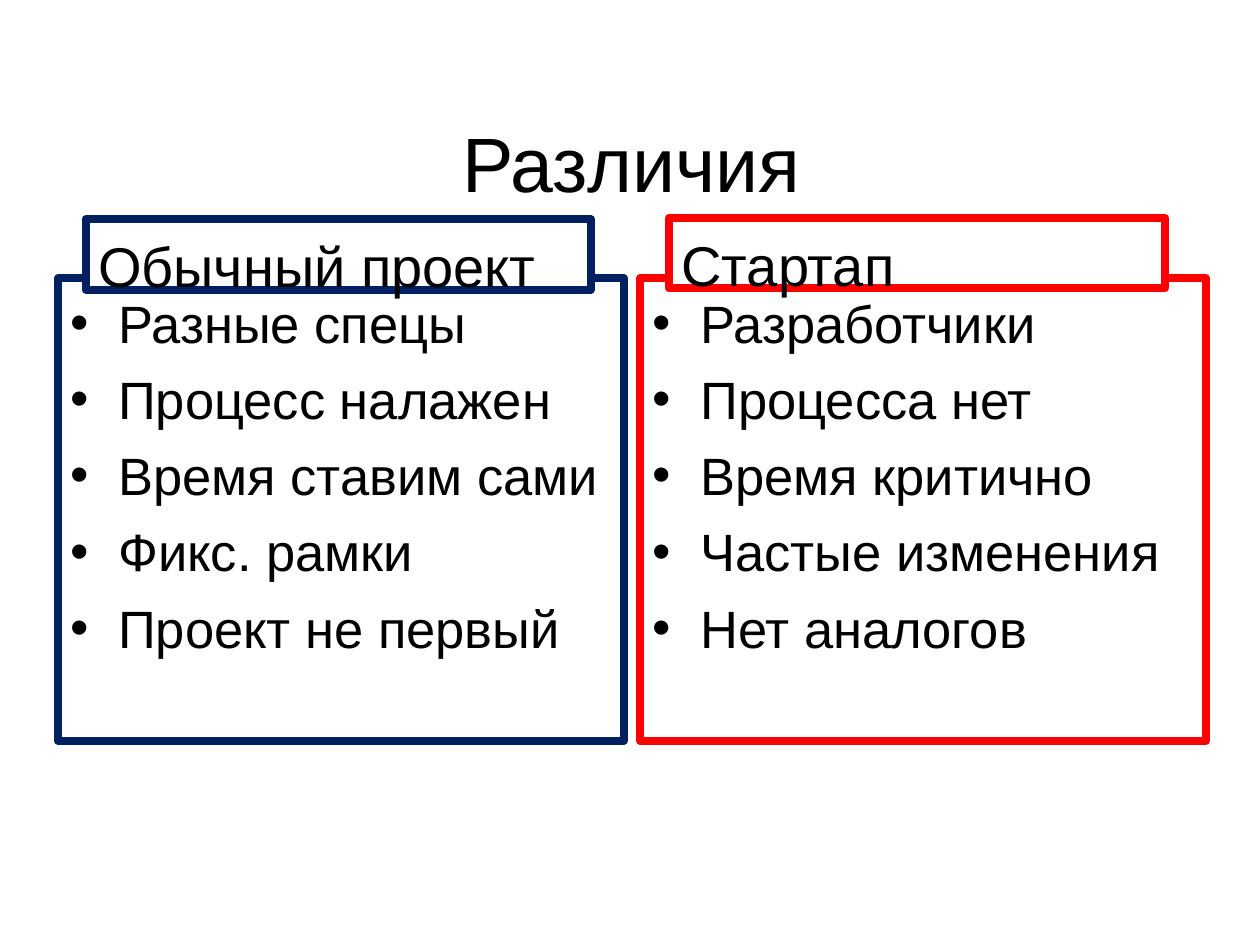
from lxml.etree import SubElement
from pptx import Presentation
from pptx.dml.color import RGBColor
from pptx.enum.shapes import MSO_SHAPE
from pptx.enum.text import MSO_ANCHOR, PP_ALIGN
from pptx.oxml.ns import qn
from pptx.util import Inches, Pt

BLACK = RGBColor(0x00, 0x00, 0x00)
WHITE = RGBColor(0xFF, 0xFF, 0xFF)
NAVY = RGBColor(0x00, 0x20, 0x60)
RED = RGBColor(0xFF, 0x00, 0x00)

STARTUP = ["Разработчики", "Процесса нет", "Время критично", "Частые изменения", "Нет аналогов"]
PROJECT = ["Разные спецы", "Процесс налажен", "Время ставим сами", "Фикс. рамки", "Проект не первый"]


class Deck:
    """Holds the text style and the current slide, and draws its elements."""

    font = "Arial"
    border = Pt(4.5)
    indent = Inches(0.38)

    def __init__(self, s):
        self.s = s

    def add_run(self, p, text, size):
        r = p.add_run()
        r.text = text
        r.font.name = self.font
        r.font.size = Pt(size)
        r.font.color.rgb = BLACK

    def title(self, text, x, y, w, h):
        tf = self.s.shapes.add_textbox(Inches(x), Inches(y), Inches(w), Inches(h)).text_frame
        tf.word_wrap = True
        tf.vertical_anchor = MSO_ANCHOR.MIDDLE
        p = tf.paragraphs[0]
        p.alignment = PP_ALIGN.CENTER
        self.add_run(p, text, 44)

    def frame(self, x, y, w, h, color, fill=WHITE):
        sp = self.s.shapes.add_shape(MSO_SHAPE.RECTANGLE, Inches(x), Inches(y), Inches(w), Inches(h))
        sp.shadow.inherit = False
        if fill is None:
            sp.fill.background()
        else:
            sp.fill.solid()
            sp.fill.fore_color.rgb = fill
        sp.line.color.rgb = color
        sp.line.width = self.border
        tf = sp.text_frame
        tf.word_wrap = True
        tf.vertical_anchor = MSO_ANCHOR.TOP
        tf.margin_top = Inches(0.1)
        return tf

    def header(self, text, x, y, w, h, color):
        p = self.frame(x, y, w, h, color).paragraphs[0]
        p.alignment = PP_ALIGN.LEFT
        self.add_run(p, text, 32)

    def bullets(self, items, x, y, w, h, color, fill=WHITE):
        tf = self.frame(x, y, w, h, color, fill)
        for i, item in enumerate(items):
            p = tf.add_paragraph() if i else tf.paragraphs[0]
            p.alignment = PP_ALIGN.LEFT
            p.space_before = Pt(7.5 if i else 0)
            pPr = p._p.get_or_add_pPr()
            pPr.set("marL", str(self.indent))
            pPr.set("indent", str(-self.indent))
            SubElement(pPr, qn("a:buFont"), typeface=self.font)
            SubElement(pPr, qn("a:buChar"), char="•")
            self.add_run(p, item, 30)


def main():
    prs = Presentation()
    prs.slide_width = Inches(10)
    prs.slide_height = Inches(7.5)
    deck = Deck(prs.slides.add_slide(prs.slide_layouts[6]))
    deck.title("Различия", 0.51, 0.94, 9, 0.68)
    deck.bullets(STARTUP, 5.08, 2.21, 4.49, 3.67, RED, fill=None)
    deck.bullets(PROJECT, 0.46, 2.21, 4.49, 3.67, NAVY)
    deck.header("Обычный проект", 0.68, 1.74, 4.01, 0.56, NAVY)
    deck.header("Стартап", 5.31, 1.73, 3.94, 0.56, RED)
    prs.save("out.pptx")


if __name__ == "__main__":
    main()
